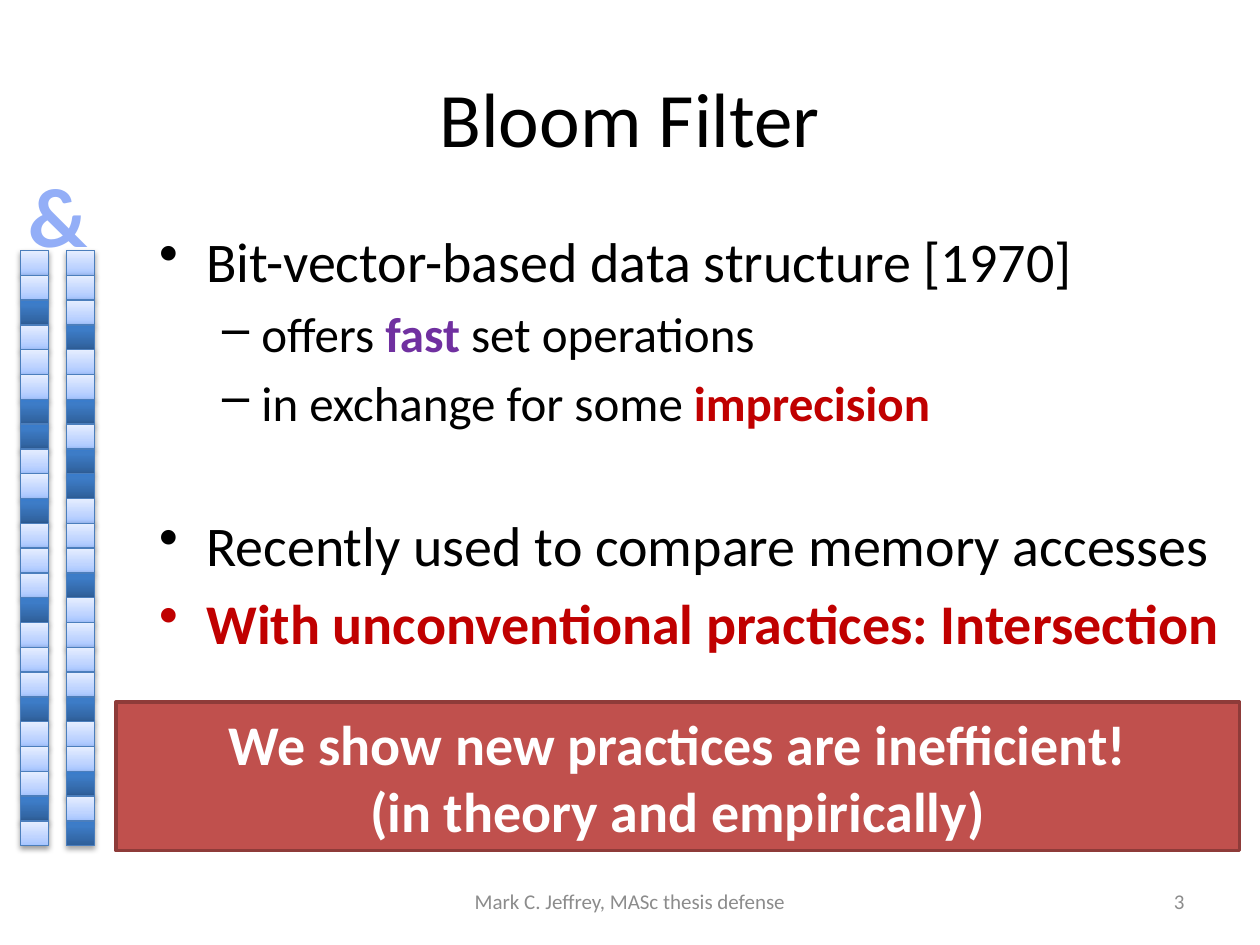
from lxml import etree
from pptx import Presentation
from pptx.dml.color import RGBColor
from pptx.enum.shapes import MSO_SHAPE
from pptx.enum.text import MSO_ANCHOR, PP_ALIGN
from pptx.oxml import parse_xml
from pptx.oxml.ns import nsdecls, qn
from pptx.util import Cm, Pt

LEFT, CENTER, RIGHT = PP_ALIGN.LEFT, PP_ALIGN.CENTER, PP_ALIGN.RIGHT
TOP, MIDDLE = MSO_ANCHOR.TOP, MSO_ANCHOR.MIDDLE
RECTANGLE = MSO_SHAPE.RECTANGLE
TITLE_ONLY = 5

FONT = "Calibri"
BLACK, WHITE, GREY = "000000", "FFFFFF", "8C8C8C"
RED, PURPLE = "C00000", "7030A0"
BANNER_FILL, BANNER_LINE = "C0504D", "8E3B39"
CELL_LINE, AMPERSAND = "4B7EBC", "93AEF7"

TITLE = "Bloom Filter"
# level, points before, spans of (text, accent colour or None)
BULLETS = [
    (0, 6.4, [("Bit-vector-based data structure [1970]", None)]),
    (1, 5.6, [("offers ", None), ("fast", PURPLE), (" set operations", None)]),
    (1, 5.6, [("in exchange for some ", None), ("imprecision", RED)]),
    (0, 45, [("Recently used to compare memory accesses", None)]),
    (0, 6.4, [("With unconventional practices: Intersection", RED)]),
]
# bullet sign, text size, left margin and hanging indent in cm
LEVELS = [("•", 32, 0.95, 0.95), ("–", 28, 2.06, 0.79)]
BANNER = ["We show new practices are inefficient!", "(in theory and empirically)"]
FOOTER = "Mark C. Jeffrey, MASc thesis defense"
PAGE_NUMBER = "3"

BIT_VECTORS = ["001000110010001000100010", "000100101100010000100101"]
VECTOR_LEFT, VECTOR_TOP, VECTOR_PITCH = 0.42, 5.05, 0.92
CELL_WIDTH, CELL_HEIGHT = 0.56, 0.5
# gradient stops (percent, colour), shadow opacity in percent, shadow distance
CELL_STYLES = {
    "0": ([(0, "A4C4FF"), (35, "BFD4FF"), (100, "E6EEFF")], 38, 1.6),
    "1": ([(0, "2F5F99"), (80, "3D7CC7"), (100, "3A7CCB")], 35, 1.8),
}
SHADOW_BLUR = 3.1


def colour(value):
    return RGBColor.from_string(value)


def add_span(para, text, size=32, color=BLACK, bold=False):
    span = para.add_run()
    span.text = text
    span.font.name = FONT
    span.font.size = Pt(size)
    span.font.bold = bold
    span.font.color.rgb = colour(color)


def write(box, lines, align=LEFT, anchor=TOP, wrap=True, **span_format):
    """Fill a shape with one paragraph per line, all in the same format."""
    frame = box.text_frame
    frame.word_wrap = wrap
    frame.vertical_anchor = anchor
    for index, line in enumerate(lines):
        para = frame.add_paragraph() if index else frame.paragraphs[0]
        para.alignment = align
        add_span(para, line, **span_format)


def add_text(page, place, text, **text_format):
    box = page.shapes.add_textbox(*map(Cm, place))
    write(box, [text], **text_format)


def add_bullets(page, place):
    frame = page.shapes.add_textbox(*map(Cm, place)).text_frame
    frame.word_wrap = True
    for index, (level, before, spans) in enumerate(BULLETS):
        sign, size, margin, hanging = LEVELS[level]
        para = frame.add_paragraph() if index else frame.paragraphs[0]
        para.level = level
        para.space_before = Pt(before)
        for text, accent in spans:
            add_span(para, text, size=size, color=accent or BLACK, bold=bool(accent))
        properties = para._p.get_or_add_pPr()
        properties.set("marL", str(Cm(margin)))
        properties.set("indent", str(-Cm(hanging)))
        etree.SubElement(properties, qn("a:buChar"), char=sign)


def style_cell(cell, stops, opacity, distance):
    """Give a cell its outline, upward gradient and soft shadow."""
    cell.line.color.rgb = colour(CELL_LINE)
    cell.line.width = Pt(0.75)
    stop_list = "".join(
        f'<a:gs pos="{percent * 1000}"><a:srgbClr val="{value}"/></a:gs>'
        for percent, value in stops)
    outline = cell._element.spPr.find(qn("a:ln"))
    outline.addprevious(parse_xml(
        f'<a:gradFill {nsdecls("a")} rotWithShape="1"><a:gsLst>{stop_list}</a:gsLst>'
        '<a:lin ang="16200000" scaled="0"/></a:gradFill>'))
    outline.addnext(parse_xml(
        f'<a:effectLst {nsdecls("a")}><a:outerShdw blurRad="{Pt(SHADOW_BLUR)}" '
        f'dist="{Pt(distance)}" dir="5400000" rotWithShape="0"><a:srgbClr val="{BLACK}">'
        f'<a:alpha val="{opacity * 1000}"/></a:srgbClr></a:outerShdw></a:effectLst>'))


def add_bit_vector(page, left, bits):
    group = page.shapes.add_group_shape()
    for row, bit in enumerate(bits):
        top = VECTOR_TOP + row * CELL_HEIGHT
        cell = group.shapes.add_shape(
            RECTANGLE, Cm(left), Cm(top), Cm(CELL_WIDTH), Cm(CELL_HEIGHT))
        style_cell(cell, *CELL_STYLES[bit])


def add_banner(page, place):
    banner = page.shapes.add_shape(RECTANGLE, *map(Cm, place))
    banner.shadow.inherit = False
    banner.fill.solid()
    banner.fill.fore_color.rgb = colour(BANNER_FILL)
    banner.line.color.rgb = colour(BANNER_LINE)
    banner.line.width = Pt(2)
    write(banner, BANNER, align=CENTER, anchor=MIDDLE, color=WHITE, bold=True)


def main():
    deck = Presentation()
    deck.slide_width, deck.slide_height = Cm(25.4), Cm(19.05)
    page = deck.slides.add_slide(deck.slide_layouts[TITLE_ONLY])

    title = page.shapes.title
    title.left, title.top, title.width, title.height = map(Cm, (1.27, 0.76, 22.86, 3.18))
    write(title, [TITLE], align=CENTER, anchor=MIDDLE, size=44)

    add_bullets(page, (2.96, 4.45, 22.44, 13.33))
    add_text(page, (8.68, 17.66, 8.04, 1.01), FOOTER,
             align=CENTER, anchor=MIDDLE, size=12, color=GREY)
    add_text(page, (18.2, 17.66, 5.93, 1.01), PAGE_NUMBER,
             align=RIGHT, anchor=MIDDLE, size=12, color=GREY)
    for index, bits in enumerate(BIT_VECTORS):
        add_bit_vector(page, VECTOR_LEFT + index * VECTOR_PITCH, bits)
    add_text(page, (0.33, 3.18, 1.75, 2.31), "&",
             wrap=False, size=48, color=AMPERSAND, bold=True)
    add_banner(page, (2.34, 14.15, 22.65, 3))

    deck.save("out.pptx")


if __name__ == "__main__":
    main()
